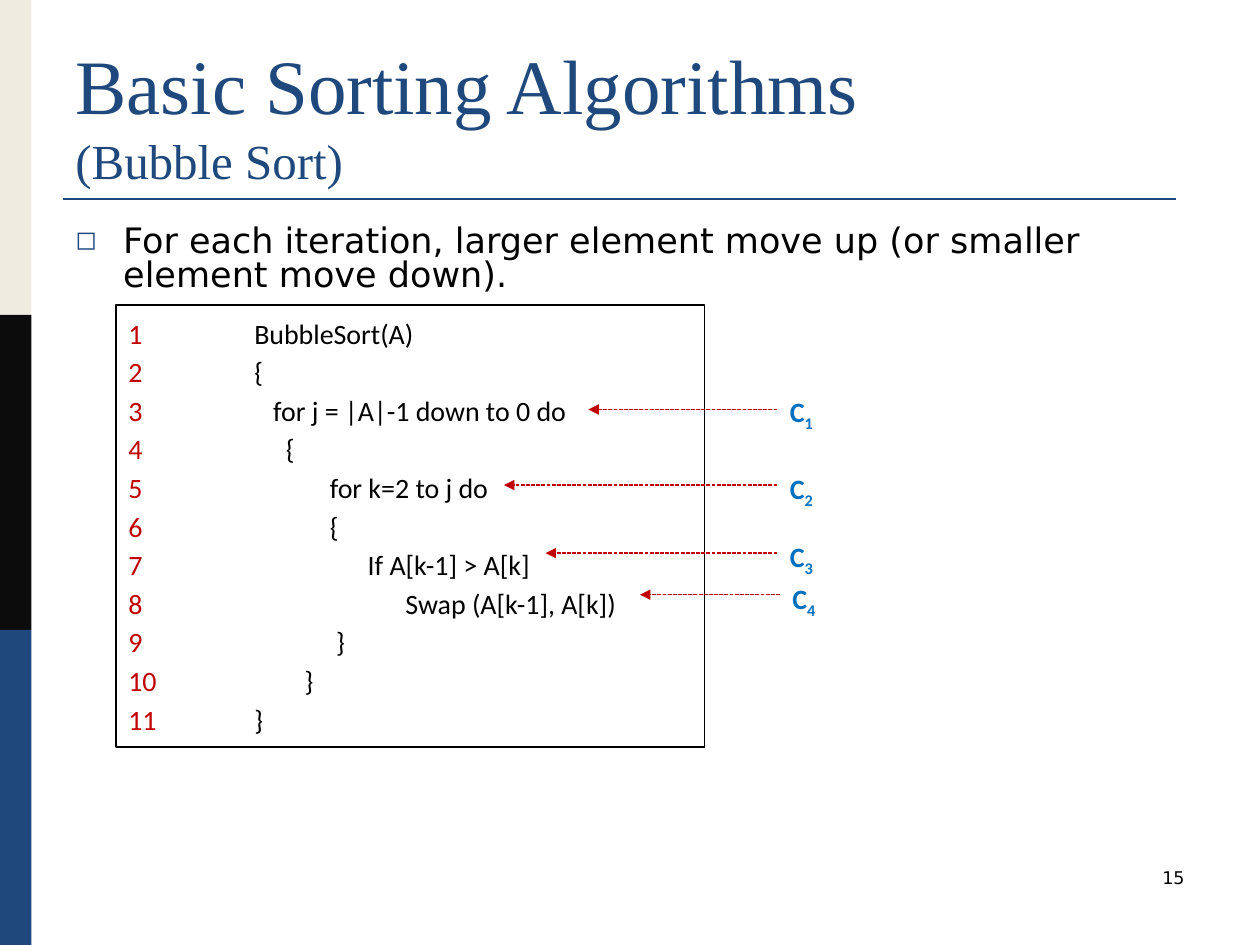
from lxml import etree
from pptx import Presentation
from pptx.dml.color import RGBColor
from pptx.enum.dml import MSO_LINE
from pptx.enum.shapes import MSO_CONNECTOR, MSO_SHAPE
from pptx.enum.text import MSO_ANCHOR, PP_ALIGN
from pptx.oxml.ns import qn
from pptx.util import Inches, Pt

RECT = MSO_SHAPE.RECTANGLE
STRAIGHT = MSO_CONNECTOR.STRAIGHT
DASH = MSO_LINE.SQUARE_DOT
TOP, BOTTOM = MSO_ANCHOR.TOP, MSO_ANCHOR.BOTTOM
LEFT, RIGHT = PP_ALIGN.LEFT, PP_ALIGN.RIGHT

NAVY = RGBColor(0x1F, 0x49, 0x7D)
CREAM = RGBColor(0xEE, 0xEC, 0xE1)
INK = RGBColor(0x0C, 0x0C, 0x0C)
BLACK = RGBColor(0, 0, 0)
WHITE = RGBColor(0xFF, 0xFF, 0xFF)
RED = RGBColor(0xC0, 0, 0)
BLUE = RGBColor(0, 0x70, 0xC0)

prs = Presentation()
prs.slide_width, prs.slide_height = Inches(10), Inches(7.5)
s = prs.slides.add_slide(prs.slide_layouts[6])


def add_text(p, text, size=16, font="Calibri", color=BLACK, bold=False, baseline=None):
    r = p.add_run()
    r.text = text
    r.font.size, r.font.name, r.font.bold = Pt(size), font, bold
    r.font.color.rgb = color
    if baseline:
        r.font._element.set("baseline", str(baseline))


def add_line(x1, y1, x2, y2, color, width):
    line = s.shapes.add_connector(STRAIGHT, Inches(x1), Inches(y1), Inches(x2), Inches(y2))
    line.line.color.rgb = color
    line.line.width = Pt(width)
    return line


for i, color in enumerate((CREAM, INK, NAVY)):
    sp = s.shapes.add_shape(RECT, 0, Inches(2.5 * i), Inches(0.25), Inches(2.5))
    sp.shadow.inherit = False
    sp.fill.solid()
    sp.fill.fore_color.rgb = color
    sp.line.fill.background()

rule = add_line(0.5, 1.58, 9.33, 1.58, NAVY, 1.5)
etree.SubElement(rule._element.spPr, qn("a:effectLst"))

tf = s.shapes.add_textbox(Inches(0.5), Inches(0.3), Inches(9), Inches(1.25)).text_frame
tf.word_wrap = True
tf.vertical_anchor = BOTTOM
p = tf.paragraphs[0]
add_text(p, "Basic Sorting Algorithms", size=44, font="Times New Roman", color=NAVY)
p.add_line_break()
add_text(p, "(Bubble Sort)", size=28, font="Times New Roman", color=NAVY)

tf = s.shapes.add_textbox(Inches(0.5), Inches(1.75), Inches(9), Inches(0.67)).text_frame
tf.word_wrap = True
p = tf.paragraphs[0]
p.line_spacing = 0.8
p.space_before = Pt(4)
add_text(p, "For each iteration, larger element move up (or smaller element move down).",
         size=20, font="DejaVu Sans")
pPr = p._p.get_or_add_pPr()
pPr.set("marL", str(Inches(0.38)))
pPr.set("indent", str(Inches(-0.38)))
bullet_color = etree.SubElement(pPr, qn("a:buClr"))
etree.SubElement(bullet_color, qn("a:srgbClr"), val=str(NAVY))
etree.SubElement(pPr, qn("a:buSzPct"), val="75000")
etree.SubElement(pPr, qn("a:buFont"), typeface="DejaVu Sans")
etree.SubElement(pPr, qn("a:buChar"), char="◻")

tf = s.shapes.add_textbox(Inches(7.17), Inches(6.83), Inches(2.33), Inches(0.5)).text_frame
tf.word_wrap = True
p = tf.paragraphs[0]
p.alignment = RIGHT
add_text(p, "15", size=10, font="DejaVu Sans")

CODE = [
    (1, "BubbleSort(A)"),
    (1, "{"),
    (1.15, "for j = |A|-1 down to 0 do"),
    (1.25, "{"),
    (1.6, "for k=2 to j do"),
    (1.6, "{"),
    (1.9, "If A[k-1] > A[k]"),
    (2.2, "Swap (A[k-1], A[k])"),
    (1.65, "}"),
    (1.4, "}"),
    (1, "}"),
]
sp = s.shapes.add_shape(RECT, Inches(0.92), Inches(2.42), Inches(4.67), Inches(3.51))
sp.shadow.inherit = False
sp.fill.solid()
sp.fill.fore_color.rgb = WHITE
sp.line.color.rgb = BLACK
sp.line.width = Pt(0.75)
tf = sp.text_frame
tf.word_wrap = True
tf.vertical_anchor = TOP
for number, (tab, code) in enumerate(CODE, 1):
    p = tf.paragraphs[0] if number == 1 else tf.add_paragraph()
    p.alignment = LEFT
    p.line_spacing = 1.15
    tabs = etree.SubElement(p._p.get_or_add_pPr(), qn("a:tabLst"))
    etree.SubElement(tabs, qn("a:tab"), pos=str(Inches(tab)), algn="l")
    add_text(p, f"{number}\t", color=RED)
    add_text(p, code)

COSTS = [
    (6.17, 3.04, 4.67, 3.25),
    (6.17, 3.65, 4, 3.85),
    (6.17, 4.19, 4.33, 4.39),
    (6.19, 4.52, 5.08, 4.72),
]
for number, (x, top, tip, y) in enumerate(COSTS, 1):
    tf = s.shapes.add_textbox(Inches(x), Inches(top), Inches(0.4), Inches(0.4)).text_frame
    tf.word_wrap = False
    p = tf.paragraphs[0]
    p.line_spacing = 1.15
    add_text(p, "C", color=BLUE, bold=True)
    add_text(p, str(number), color=BLUE, bold=True, baseline=-25000)

    arrow = add_line(x, y, tip, y, RED, 0.75)
    arrow.line.dash_style = DASH
    etree.SubElement(arrow.line._get_or_add_ln(), qn("a:tailEnd"), type="triangle")
    etree.SubElement(arrow._element.spPr, qn("a:effectLst"))

prs.save("out.pptx")
